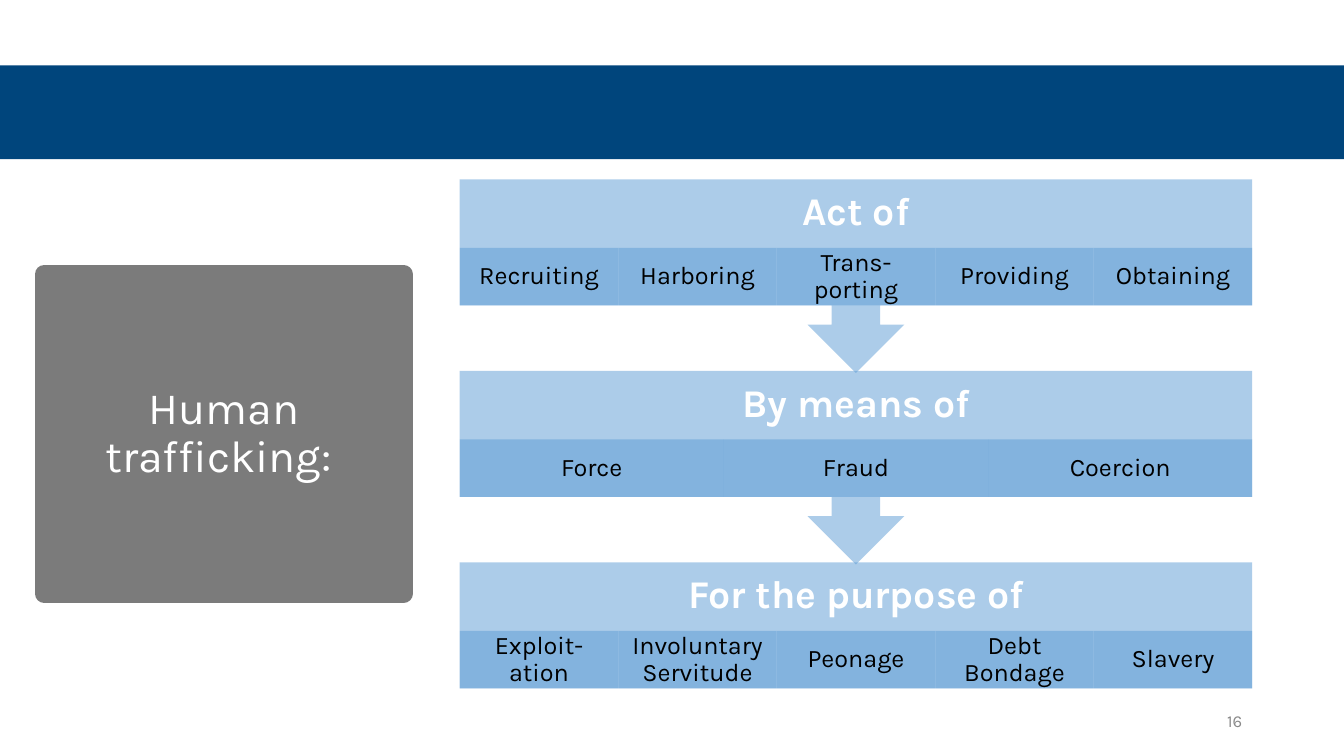
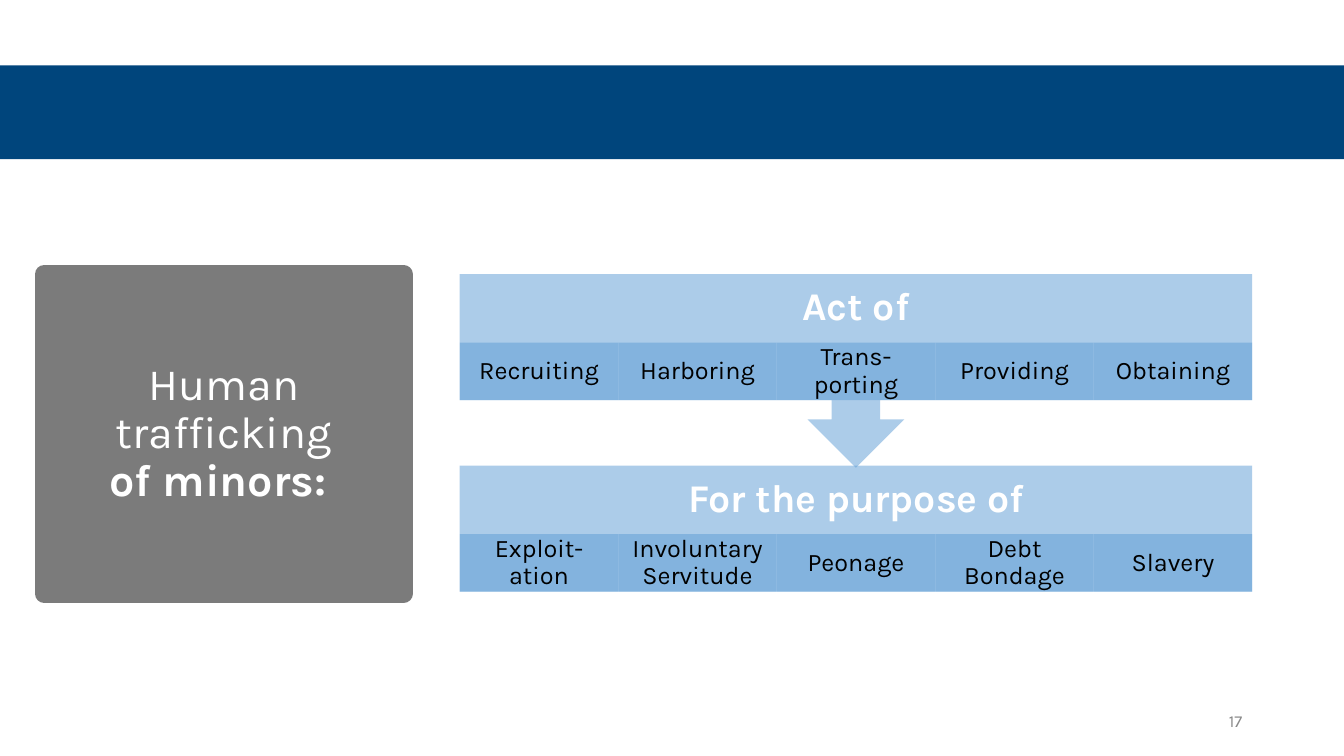
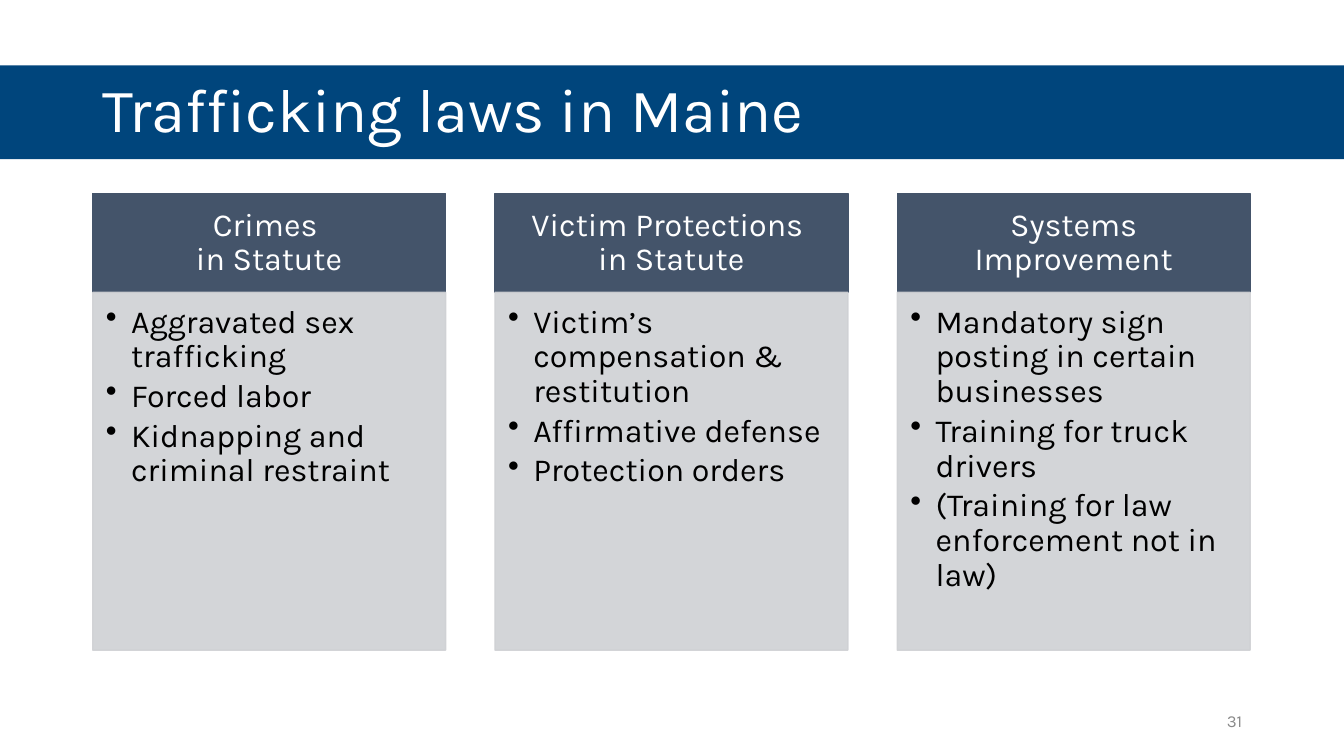
from dataclasses import dataclass

from pptx import Presentation
from pptx.dml.color import RGBColor
from pptx.enum.shapes import MSO_SHAPE
from pptx.enum.text import MSO_ANCHOR, MSO_AUTO_SIZE, PP_ALIGN
from pptx.oxml.ns import qn
from pptx.util import Inches, Pt

RECT = MSO_SHAPE.RECTANGLE
LEFT, CENTER, RIGHT = PP_ALIGN.LEFT, PP_ALIGN.CENTER, PP_ALIGN.RIGHT
TOP, MIDDLE = MSO_ANCHOR.TOP, MSO_ANCHOR.MIDDLE
TITLE_ONLY = 5


@dataclass(frozen=True)
class Theme:
    font: str = "Karla"
    band: str = "00457C"
    topic: str = "7B7B7B"
    stage: str = "5B9BD5"
    card_head: str = "44546A"
    card_body: str = "CFD1D4"
    white: str = "FFFFFF"
    black: str = "000000"
    muted: str = "898989"
    title_size: float = 44
    topic_size: float = 32
    stage_size: float = 28
    card_size: float = 23
    item_size: float = 18
    number_size: float = 12


T = Theme()

ACT = ("Act of", ["Recruiting", "Harboring", "Trans-porting", "Providing", "Obtaining"])
MEANS = ("By means of", ["Force", "Fraud", "Coercion"])
PURPOSE = ("For the purpose of",
           ["Exploit-ation", "Involuntary Servitude", "Peonage", "Debt Bondage", "Slavery"])

# Each topic is one paragraph: a list of (text, bold) runs.
FLOWS = [
    {"number": 16, "top": 1.78, "topic": [("Human trafficking: ", False)],
     "stages": [ACT, MEANS, PURPOSE]},
    {"number": 17, "top": 2.72,
     "topic": [("Human trafficking\n", False), ("of minors: ", True)],
     "stages": [ACT, PURPOSE]},
]

LAWS = {
    "number": 31,
    "title": "Trafficking laws in Maine",
    "cards": [
        ("Crimes \nin Statute",
         ["Aggravated sex trafficking", "Forced labor", "Kidnapping and criminal restraint"]),
        ("Victim Protections \nin Statute",
         ["Victim’s compensation & restitution", "Affirmative defense", "Protection orders"]),
        ("Systems\nImprovement",
         ["Mandatory sign posting in certain businesses", "Training for truck drivers",
          "(Training for law enforcement not in law)"]),
    ],
}

# Geometry in inches
SLIDE_W, SLIDE_H = 13.33, 7.5
STAGE_X, STAGE_W, STAGE_H, STAGE_PITCH = 4.56, 7.86, 1.25, 1.9
HEADING_H, ITEM_TOP, ITEM_H = 0.67, 0.68, 0.57
ARROW_H, STEM_H, STEM_HALF, HEAD_HALF = 0.67, 0.19, 0.24, 0.48
CARD_X, CARD_Y, CARD_W, CARD_PITCH = 0.92, 1.92, 3.5, 3.99
CARD_HEAD_H, CARD_BODY_H = 0.98, 3.55


def rgb(value):
    return RGBColor.from_string(value)


def write(shape, paragraphs, *, size, color=T.white, bold=False, align=CENTER,
          anchor=MIDDLE, inset=(0.1, 0.05, 0.1, 0.05), after=0, spacing=0.9, bullet=False):
    """Fill a shape with paragraphs, each a string or a list of (text, bold) runs."""
    tf = shape.text_frame
    tf.word_wrap = True
    tf.auto_size = MSO_AUTO_SIZE.NONE
    tf.vertical_anchor = anchor
    tf.margin_left, tf.margin_top, tf.margin_right, tf.margin_bottom = map(Inches, inset)
    for i, runs in enumerate(paragraphs):
        p = tf.add_paragraph() if i else tf.paragraphs[0]
        p.alignment, p.line_spacing, p.space_after = align, spacing, Pt(after)
        if bullet:
            add_bullet(p)
        if isinstance(runs, str):
            runs = [(runs, bold)]
        for text, is_bold in runs:
            for j, line in enumerate(text.split("\n")):
                if j:
                    p.add_line_break()
                if line:
                    r = p.add_run()
                    r.text = line
                    r.font.name, r.font.size, r.font.bold = T.font, Pt(size), is_bold
                    r.font.color.rgb = rgb(color)


def add_bullet(p, indent=0.25):
    pPr = p._p.get_or_add_pPr()
    pPr.set("marL", str(Inches(indent)))
    pPr.set("indent", str(-Inches(indent)))
    pPr.makeelement(qn("a:buChar"), {"char": "•"})
    pPr.append(pPr.makeelement(qn("a:buChar"), {"char": "•"}))


def paint(shape, fill, line_width=0, opacity=100):
    shape.fill.solid()
    shape.fill.fore_color.rgb = rgb(fill)
    if line_width:
        shape.line.color.rgb = rgb(fill)
        shape.line.width = Pt(line_width)
    else:
        shape.line.fill.background()
    if opacity < 100:
        for clr in shape._element.spPr.iter(qn("a:srgbClr")):
            clr.append(clr.makeelement(qn("a:alpha"), {"val": str(opacity * 1000)}))


def add_box(s, box, fill, **style):
    sp = s.shapes.add_shape(RECT, *map(Inches, box))
    sp.shadow.inherit = False
    paint(sp, fill, **style)
    return sp


def add_band(s):
    """Place the title band on the layout, behind every slide's content."""
    band = add_box(s, (0, 0.65, SLIDE_W, 0.93), T.band)
    s.slide_layout.shapes.element.insert(2, band.element)


def new_slide(prs, number, title_box):
    s = prs.slides.add_slide(prs.slide_layouts[TITLE_ONLY])
    title = s.shapes.title
    title.left, title.top, title.width, title.height = map(Inches, title_box)
    tb = s.shapes.add_textbox(*map(Inches, (9.42, 6.95, 3, 0.4)))
    write(tb, [str(number)], size=T.number_size, color=T.muted, align=RIGHT, spacing=1)
    return s


def add_stage(s, top, heading, items, has_arrow):
    right, bottom, mid = STAGE_X + STAGE_W, top + STAGE_H, STAGE_X + STAGE_W / 2
    neck = bottom + STEM_H
    arrow = [(mid + STEM_HALF, bottom), (mid + STEM_HALF, neck), (mid + HEAD_HALF, neck),
             (mid, bottom + ARROW_H),
             (mid - HEAD_HALF, neck), (mid - STEM_HALF, neck), (mid - STEM_HALF, bottom)]
    points = [(STAGE_X, top), (right, top), (right, bottom),
              *(arrow if has_arrow else []), (STAGE_X, bottom)]
    points = [(Inches(x), Inches(y)) for x, y in points]
    outline = s.shapes.build_freeform(*points[0])
    outline.add_line_segments(points[1:], close=True)
    sp = outline.convert_to_shape()
    sp.shadow.inherit = False
    paint(sp, T.stage, opacity=50)
    pad = 0.16
    below = STAGE_H + (ARROW_H if has_arrow else 0) - HEADING_H + pad
    write(sp, [heading], size=T.stage_size, bold=True, after=9, inset=(pad, pad, pad, below))

    item_w = STAGE_W / len(items)
    for i, item in enumerate(items):
        cell = add_box(s, (STAGE_X + i * item_w, top + ITEM_TOP, item_w, ITEM_H),
                       T.stage, opacity=50)
        write(cell, [item], size=T.item_size, color=T.black, after=7,
              inset=(0.13, 0.02, 0.13, 0.02))


def add_flow_slide(prs, flow):
    s = new_slide(prs, flow["number"], (0.44, 2.72, 3.56, 3.17))
    paint(s.shapes.title, T.topic, line_width=13.75)
    write(s.shapes.title, [flow["topic"]], size=T.topic_size)
    last = len(flow["stages"]) - 1
    for i, (heading, items) in reversed(list(enumerate(flow["stages"]))):
        add_stage(s, flow["top"] + i * STAGE_PITCH, heading, items, has_arrow=i < last)
    return s


def add_laws_slide(prs, laws):
    s = new_slide(prs, laws["number"], (0.92, 0.39, 11.5, 1.45))
    write(s.shapes.title, [laws["title"]], size=T.title_size, align=LEFT)
    for i, (heading, points) in enumerate(laws["cards"]):
        x = CARD_X + i * CARD_PITCH
        head = add_box(s, (x, CARD_Y, CARD_W, CARD_HEAD_H), T.card_head, line_width=1)
        write(head, [heading], size=T.card_size, after=8, inset=(0.18, 0.1, 0.18, 0.1))
        body = add_box(s, (x, CARD_Y + CARD_HEAD_H, CARD_W, CARD_BODY_H), T.card_body,
                       line_width=1, opacity=90)
        write(body, points, size=T.card_size, color=T.black, align=LEFT, anchor=TOP,
              after=3.45, inset=(0.13, 0.13, 0.18, 0.2), bullet=True)


def main():
    prs = Presentation()
    prs.slide_width, prs.slide_height = Inches(SLIDE_W), Inches(SLIDE_H)
    slides = [add_flow_slide(prs, flow) for flow in FLOWS]
    add_band(slides[0])
    add_laws_slide(prs, LAWS)
    prs.save("out.pptx")


if __name__ == "__main__":
    main()
